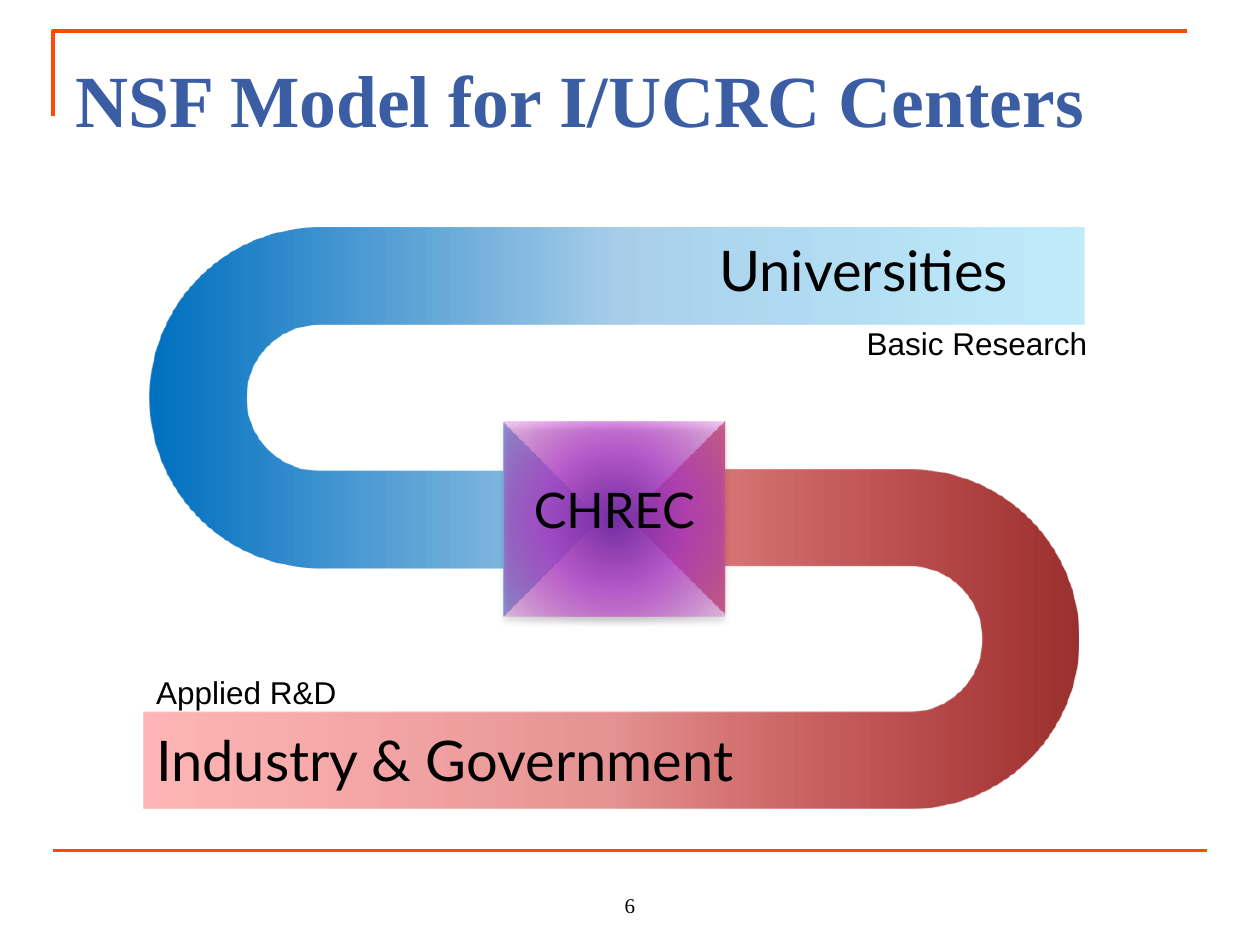
from dataclasses import dataclass

from pptx import Presentation
from pptx.dml.color import RGBColor
from pptx.enum.shapes import MSO_CONNECTOR, MSO_SHAPE
from pptx.enum.text import MSO_ANCHOR, PP_ALIGN
from pptx.oxml import parse_xml
from pptx.oxml.ns import nsdecls, qn
from pptx.util import Inches, Pt

COLORS = {"rule": "FF4A00", "title": "3A5DA4", "text": "000000"}
FORMATS = {
    "title": {"size": Pt(42), "name": "Times New Roman", "bold": True},
    "number": {"size": Pt(12), "name": "Times New Roman"},
    "partner": {"size": Pt(32), "name": "Lato"},
    "center": {"size": Pt(28), "name": "Lato"},
    "role": {"size": Pt(18), "name": "Arial"},
}
UTURN = (0.25, 0.25, 0.25, 0.4375, 0.482)
LINEAR = '<a:lin ang="5400000" scaled="0"/>'
RADIAL = '<a:path path="circle"><a:fillToRect l="50000" t="50000" r="50000" b="50000"/></a:path>'


@dataclass
class Label:
    text: str
    box: tuple
    style: str
    align: PP_ALIGN = PP_ALIGN.LEFT
    anchor: MSO_ANCHOR = MSO_ANCHOR.TOP


@dataclass
class Flow:
    box: tuple
    rotation: int
    stops: tuple


FLOWS = [
    Flow((3.36, -0.36, 3.08, 7.42), 270,
         ((0, "0070C0", 100), (50, "0070C0", 34), (100, "00B0F0", 24))),
    Flow((3.31, 1.17, 3.08, 7.42), 90,
         ((0, "9A3130", 100), (50, "C00000", 42), (100, "FF0000", 28))),
]
HUB_BOX = (4, 3.35, 1.75, 1.54)
HUB_STOPS = ((0, "7030A0", 100), (50, "B834D2", 69), (100, "CC3ACC", 26))
LABELS = [
    Label("Universities", (5.61, 1.82, 3, 0.64), "partner"),
    Label("Industry & Government", (1.14, 5.71, 6.94, 0.64), "partner"),
    Label("Basic Research", (6.78, 2.52, 2.61, 0.42), "role"),
    Label("Applied R&D", (1.14, 5.29, 2.61, 0.42), "role"),
    Label("CHREC", (4, 3.76, 1.75, 0.57), "center", PP_ALIGN.CENTER),
    Label("6", (4, 6.83, 2, 0.5), "number", PP_ALIGN.CENTER, MSO_ANCHOR.BOTTOM),
]


def inches(values: tuple) -> list:
    return [Inches(value) for value in values]


def style_text(paragraph, style: str, color: str) -> None:
    for attribute, value in FORMATS[style].items():
        setattr(paragraph.font, attribute, value)
    paragraph.font.color.rgb = RGBColor.from_string(COLORS[color])


def style_rule(line) -> None:
    line.color.rgb = RGBColor.from_string(COLORS["rule"])
    line.width = Pt(2.25)


def add_title(slide, text: str) -> None:
    title = slide.shapes.title
    title.left, title.top, title.width, title.height = inches((0.5, 0.3, 9, 1.03))
    frame = title.text_frame
    frame.text = text
    frame.vertical_anchor = MSO_ANCHOR.TOP
    frame.margin_top = Inches(0.13)
    frame.paragraphs[0].alignment = PP_ALIGN.LEFT
    style_text(frame.paragraphs[0], "title", "title")


def add_rules(slide) -> None:
    builder = slide.shapes.build_freeform(Inches(0.42), Inches(0.92))
    builder.add_line_segments([inches((0.42, 0.25)), inches((9.42, 0.25))], close=False)
    corner = builder.convert_to_shape()
    corner.shadow.inherit = False
    corner.fill.background()
    style_rule(corner.line)
    footer = slide.shapes.add_connector(
        MSO_CONNECTOR.STRAIGHT, *inches((0.42, 6.75, 9.58, 6.75)))
    style_rule(footer.line)
    footer._element.spPr.append(parse_xml(f'<a:effectLst {nsdecls("a")}/>'))


def add_gradient_shape(slide, kind: MSO_SHAPE, box: tuple, stops: tuple, direction: str):
    shape = slide.shapes.add_shape(kind, *inches(box))
    shape.shadow.inherit = False
    shape.line.fill.background()
    shape.fill.gradient()
    stop_xml = "".join(
        f'<a:gs pos="{position * 1000}"><a:srgbClr val="{color}">'
        f'<a:alpha val="{alpha * 1000}"/></a:srgbClr></a:gs>'
        for position, color, alpha in stops)
    properties = shape._element.spPr
    properties.replace(properties.find(qn("a:gradFill")), parse_xml(
        f'<a:gradFill {nsdecls("a")} rotWithShape="1">'
        f"<a:gsLst>{stop_xml}</a:gsLst>{direction}</a:gradFill>"))
    return shape


def add_flow(slide, flow: Flow) -> None:
    arrow = add_gradient_shape(slide, MSO_SHAPE.U_TURN_ARROW, flow.box, flow.stops, LINEAR)
    arrow.rotation = flow.rotation
    arrow._element.spPr.find(qn("a:xfrm")).set("flipH", "1")
    for index, value in enumerate(UTURN):
        arrow.adjustments[index] = value


def add_hub(slide) -> None:
    hub = add_gradient_shape(slide, MSO_SHAPE.RECTANGLE, HUB_BOX, HUB_STOPS, RADIAL)
    hub._element.spPr.find(qn("a:effectLst")).append(parse_xml(
        f'<a:outerShdw {nsdecls("a")} blurRad="{Pt(4)}" dist="{Pt(3)}" dir="5400000" '
        'rotWithShape="0"><a:srgbClr val="000000"><a:alpha val="40000"/>'
        "</a:srgbClr></a:outerShdw>"))


def add_label(slide, label: Label) -> None:
    frame = slide.shapes.add_textbox(*inches(label.box)).text_frame
    frame.word_wrap = True
    frame.vertical_anchor = label.anchor
    frame.text = label.text
    frame.paragraphs[0].alignment = label.align
    style_text(frame.paragraphs[0], label.style, "text")


def main() -> None:
    presentation = Presentation()
    presentation.slide_width, presentation.slide_height = inches((10, 7.5))
    slide = presentation.slides.add_slide(presentation.slide_layouts[5])
    add_rules(slide)
    add_title(slide, "NSF Model for I/UCRC Centers")
    for flow in FLOWS:
        add_flow(slide, flow)
    add_hub(slide)
    for label in LABELS:
        add_label(slide, label)
    presentation.save("out.pptx")


if __name__ == "__main__":
    main()
